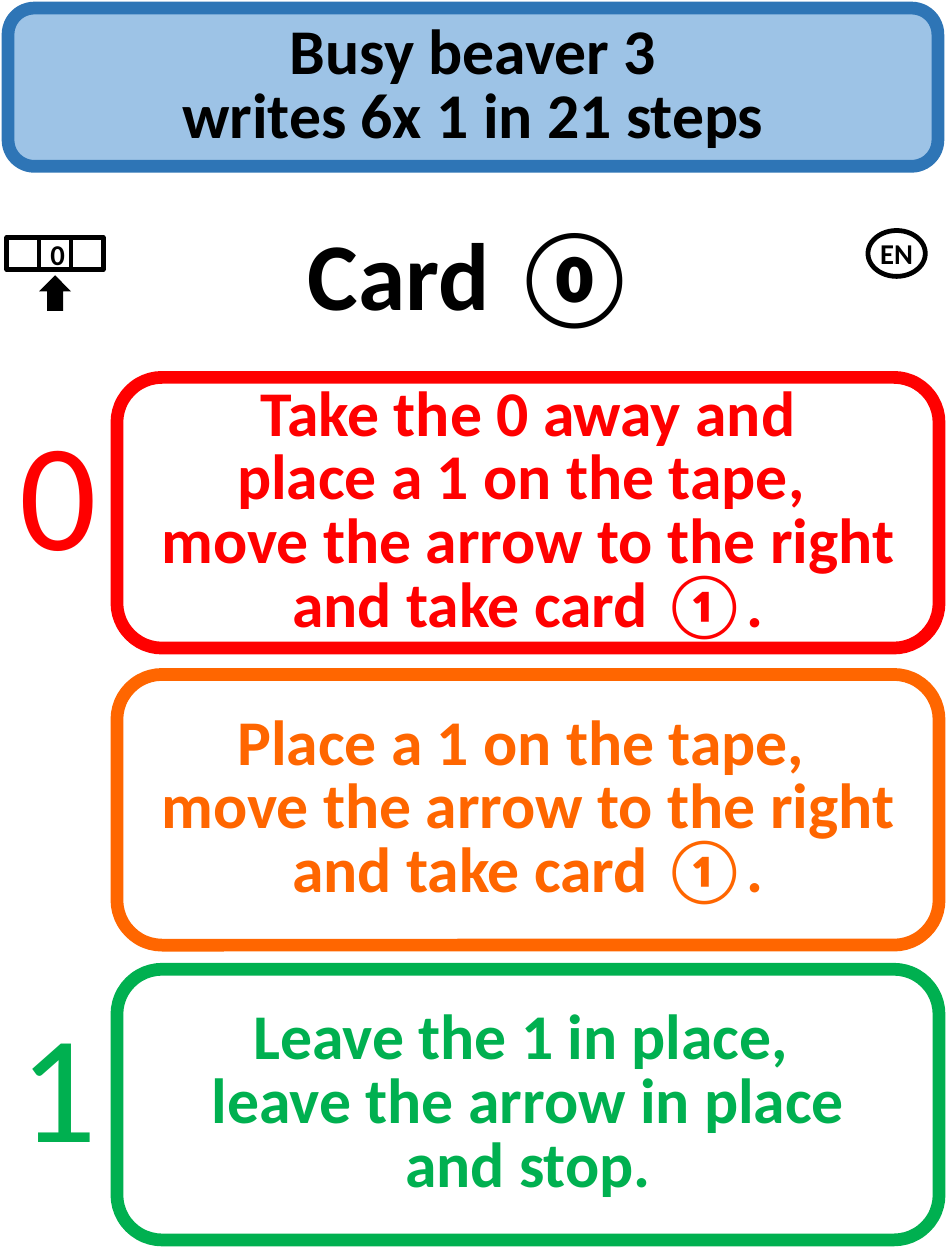
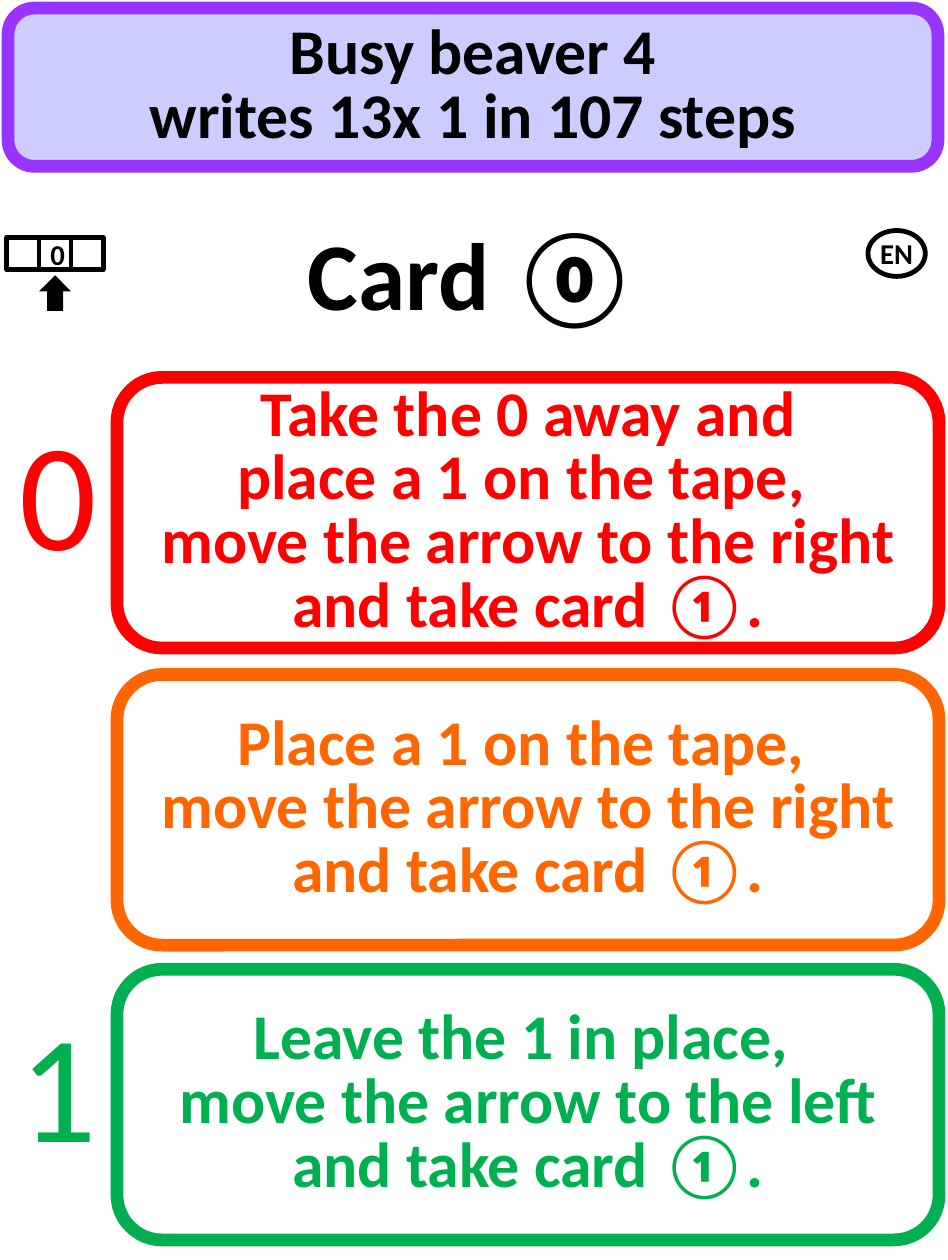
from dataclasses import dataclass

from pptx import Presentation
from pptx import util as u
from pptx.dml.color import RGBColor
from pptx.enum import shapes, text

PX = 9144  # EMU per px, 100 px to the inch
SHAPE = shapes.MSO_SHAPE


@dataclass(frozen=True)
class Theme:
    font: str = "Calibri"
    black: str = "000000"
    white: str = "FFFFFF"
    red: str = "FF0000"
    orange: str = "FF6600"
    green: str = "00B050"
    # type sizes and line widths in points
    small: int = 18
    body: int = 40
    title: int = 60
    digit: int = 96
    thin: int = 3
    thick: int = 8


THEME = Theme()


def write(frame, words, size, color=THEME.black, bold=True, centred=True, spacing=None):
    """Fill a text frame with one paragraph; each newline is a line break."""
    para = frame.paragraphs[0]
    para.alignment = text.PP_ALIGN.CENTER if centred else text.PP_ALIGN.LEFT
    if spacing:
        para.line_spacing = u.Pt(spacing)
    for number, line in enumerate(words.split("\n")):
        if number:
            para.add_line_break()
        span = para.add_run()
        span.text = line
        span.font.name = THEME.font
        span.font.size = u.Pt(size)
        span.font.bold = bold
        span.font.color.rgb = RGBColor.from_string(color)


class CardDeck:
    def __init__(self, width, height):
        self.deck = Presentation()
        self.deck.slide_width, self.deck.slide_height = width, height
        self.page = None

    def new_page(self):
        self.page = self.deck.slides.add_slide(self.deck.slide_layouts[6])

    def group(self):
        return self.page.shapes.add_group_shape().shapes

    def box(self, kind, at, fill=None, line=None, width=THEME.thick, home=None):
        home = self.page.shapes if home is None else home
        box = home.add_shape(kind, *(length * PX for length in at))
        box.shadow.inherit = False
        if fill:
            box.fill.solid()
            box.fill.fore_color.rgb = RGBColor.from_string(fill)
        else:
            box.fill.background()
        if line:
            box.line.color.rgb = RGBColor.from_string(line)
            box.line.width = u.Pt(width)
        else:
            box.line.fill.background()
        box.text_frame.word_wrap = True
        box.text_frame.vertical_anchor = text.MSO_ANCHOR.MIDDLE
        return box

    def banner(self, words, fill, line):
        box = self.box(SHAPE.ROUNDED_RECTANGLE, (7, 7, 811, 138), fill, line)
        write(box.text_frame, words, THEME.body, spacing=THEME.body)

    def heading(self, words):
        box = self.box(SHAPE.ROUNDED_RECTANGLE, (7, 168, 811, 138))
        write(box.text_frame, words, THEME.title)

    def rule(self, top, digit, words, color):
        """An instruction box, with the digit it answers to on its left."""
        home = self.group() if digit else self.page.shapes
        box = self.box(SHAPE.ROUNDED_RECTANGLE, (102, top, 717, 236), line=color, home=home)
        write(box.text_frame, words, THEME.body, color, spacing=THEME.body)
        if digit:
            label = home.add_textbox(7 * PX, (top + 13) * PX, 88 * PX, 172 * PX)
            label.text_frame.word_wrap = False
            label.text_frame.auto_size = text.MSO_AUTO_SIZE.SHAPE_TO_FIT_TEXT
            write(label.text_frame, digit, THEME.digit, color, bold=False, centred=False)

    def tape(self, symbols):
        """A row of cells with the arrow under the middle one."""
        home, side, left = self.group(), 28, 6
        for index, symbol in enumerate(symbols):
            at = (left + index * side, 207, side, side)
            cell = self.box(SHAPE.RECTANGLE, at, THEME.white, THEME.black, THEME.thin, home)
            if symbol:
                write(cell.text_frame, symbol, THEME.small)
        middle = left + len(symbols) // 2 * side
        arrow = self.box(SHAPE.DOWN_ARROW, (middle, 240, side, 31), THEME.black, home=home)
        arrow.rotation = 180

    def language(self, code):
        badge = self.box(SHAPE.OVAL, (757, 201, 50, 40), THEME.white, THEME.black, THEME.thin)
        frame = badge.text_frame
        frame.margin_left = frame.margin_right = frame.margin_top = frame.margin_bottom = 0
        write(frame, code, THEME.small)


# Wording and banner colours of each card
MOVE_RIGHT = "move the arrow to the right\nand take card ①."
CARDS = [
    ("Busy beaver 3\nwrites 6x 1 in 21 steps", "9DC3E6", "2E75B6",
     "leave the arrow in place\nand stop."),
    ("Busy beaver 4\nwrites 13x 1 in 107 steps", "CCCCFF", "9933FF",
     "move the arrow to the left\nand take card ①."),
]


def main():
    cards = CardDeck(u.Mm(210), u.Mm(279))
    for banner, fill, line, last_move in CARDS:
        cards.new_page()
        cards.banner(banner, fill, line)
        cards.heading("Card ⓪")
        # Rules for an empty cell, a 0 and a 1
        cards.rule(588, None, "Place a 1 on the tape, \n" + MOVE_RIGHT, THEME.orange)
        cards.rule(329, "0", "Take the 0 away and\nplace a 1 on the tape, \n" + MOVE_RIGHT,
                   THEME.red)
        cards.rule(845, "1", "Leave the 1 in place, \n" + last_move, THEME.green)
        cards.tape(["", "0", ""])
        cards.language("EN")
    cards.deck.save("out.pptx")


if __name__ == "__main__":
    main()
